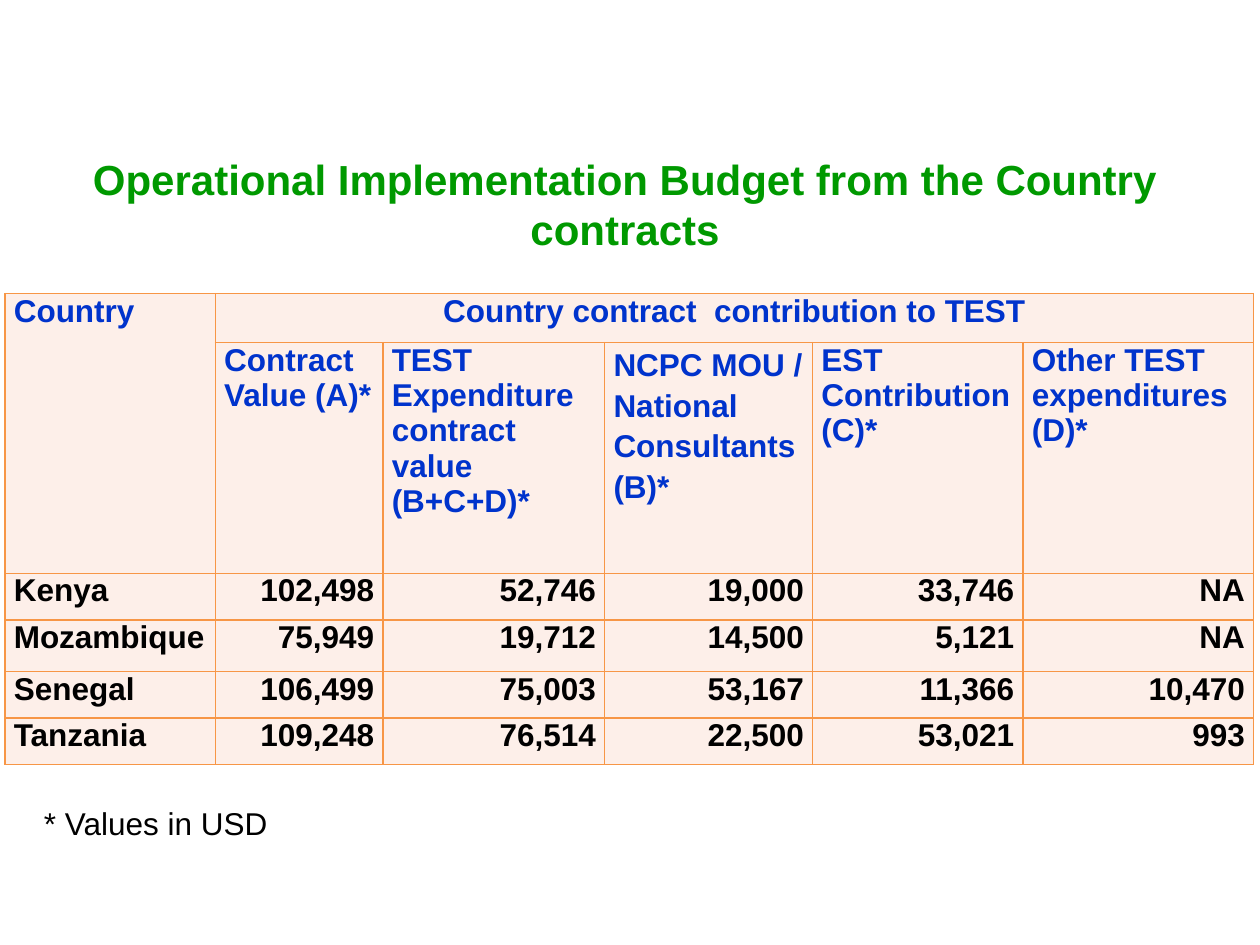
"""Build the slide with the country budget table."""
from lxml.etree import SubElement as Sub
from pptx import Presentation
from pptx.dml.color import RGBColor
from pptx.enum.text import PP_ALIGN as Align
from pptx.oxml.ns import qn
from pptx.util import Inches, Pt

GREEN = RGBColor(0x00, 0x99, 0x00)
BLUE = RGBColor(0x00, 0x33, 0xCC)
BLACK = RGBColor(0x00, 0x00, 0x00)
PINK = RGBColor(0xFD, 0xEF, 0xE9)
ORANGE = RGBColor(0xF7, 0x96, 0x46)

COLS = [1.67, 1.33, 1.76, 1.65, 1.67, 1.83]
ROWS = [0.39, 1.83, 0.37, 0.41, 0.37, 0.37]
DATA = [
    ["Country", "Country contract  contribution to TEST", "", "", "", ""],
    ["", "Contract Value (A)*", "TEST Expenditure contract value (B+C+D)*",
     "NCPC MOU / National Consultants (B)*", "EST Contribution (C)*",
     "Other TEST expenditures (D)*"],
    ["Kenya", "102,498", "52,746", "19,000", "33,746", "NA"],
    ["Mozambique", "75,949", "19,712", "14,500", "5,121", "NA"],
    ["Senegal", "106,499", "75,003", "53,167", "11,366", "10,470"],
    ["Tanzania", "109,248", "76,514", "22,500", "53,021", "993"],
]


def write(frame, text, size=18, color=BLACK, bold=True, align=Align.LEFT):
    frame.word_wrap = True
    para = frame.paragraphs[0]
    para.alignment = align
    run = para.add_run()
    run.text = text
    font = run.font
    font.name, font.size, font.bold = "Arial", Pt(size), bold
    font.color.rgb = color
    return para


deck = Presentation()
deck.slide_width, deck.slide_height = Inches(10), Inches(7.5)
wide, high = deck.slide_width, deck.slide_height
slide = deck.slides.add_slide(deck.slide_layouts[6])
shapes = slide.shapes

title = shapes.add_textbox(Inches(0.25), Inches(1.17), Inches(9.42), Inches(1.17))
write(title.text_frame, "Operational Implementation Budget from the Country contracts",
      size=24, color=GREEN, align=Align.CENTER)

grid = shapes.add_table(len(ROWS), len(COLS), Inches(0.04), Inches(2.33),
                        Inches(sum(COLS)), Inches(sum(ROWS))).table
grid.first_row = grid.horz_banding = False
for col, width in zip(grid.columns, COLS):
    col.width = Inches(width)
for row, height in zip(grid.rows, ROWS):
    row.height = Inches(height)
grid.cell(0, 0).merge(grid.cell(1, 0))
grid.cell(0, 1).merge(grid.cell(0, 5))

for r, line in enumerate(DATA):
    for c, text in enumerate(line):
        cell = grid.cell(r, c)
        cell.margin_left = cell.margin_right = Inches(0.07)
        cell.margin_top = cell.margin_bottom = 0
        props = cell._tc.get_or_add_tcPr()
        for side in ("a:lnL", "a:lnR", "a:lnT", "a:lnB"):
            edge = Sub(props, qn(side), w=str(Pt(1)))
            Sub(Sub(edge, qn("a:solidFill")), qn("a:srgbClr"), val=str(ORANGE))
        cell.fill.solid()
        cell.fill.fore_color.rgb = PINK
        if text:
            align = Align.RIGHT if r > 1 and c else Align.LEFT
            if (r, c) == (0, 1):
                align = Align.CENTER
            para = write(cell.text_frame, text, color=BLUE if r < 2 else BLACK,
                         align=align)
            if (r, c) == (1, 3):
                para.line_spacing, para.space_after = 1.15, Pt(10)

note = shapes.add_textbox(Inches(0.25), Inches(6.33), Inches(2.08), Inches(0.4))
write(note.text_frame, "* Values in USD", bold=False)

deck.save("out.pptx")
